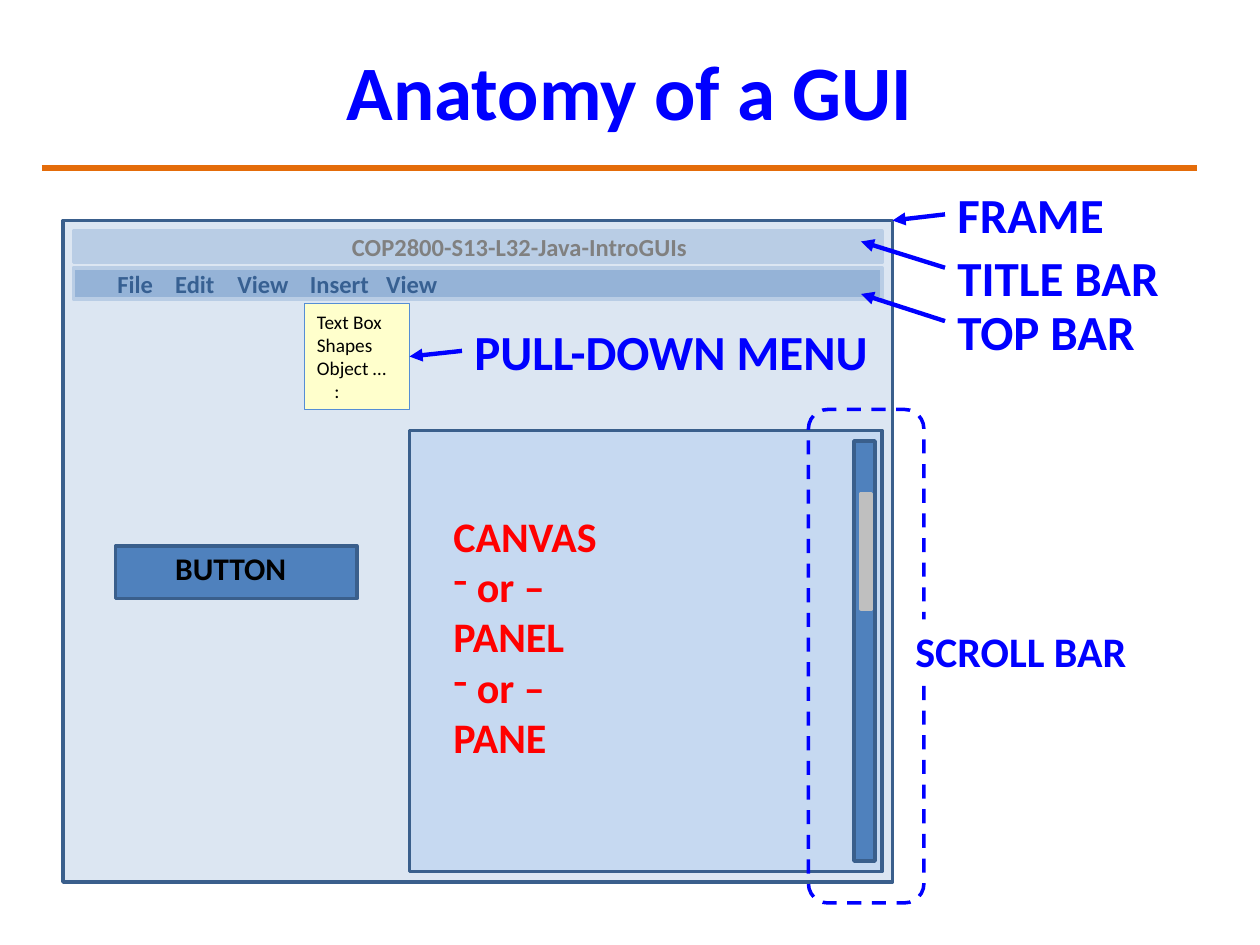
from dataclasses import dataclass
from typing import Optional

from lxml.etree import SubElement
from pptx import Presentation
from pptx.dml.color import RGBColor
from pptx.enum.dml import MSO_LINE_DASH_STYLE as Dash
from pptx.enum.shapes import MSO_CONNECTOR as Connector, MSO_SHAPE as Preset
from pptx.enum.text import MSO_ANCHOR as Anchor, PP_ALIGN as Align
from pptx.oxml.ns import qn
from pptx.util import Pt

FONT = "Calibri"
BLUE = RGBColor(0x00, 0x00, 0xFF)
RED = RGBColor(0xFF, 0x00, 0x00)
BLACK = RGBColor(0x00, 0x00, 0x00)
WHITE = RGBColor(0xFF, 0xFF, 0xFF)
ORANGE = RGBColor(0xE4, 0x6C, 0x0A)
GRAY = RGBColor(0x80, 0x80, 0x80)
SILVER = RGBColor(0xBF, 0xBF, 0xBF)
YELLOW = RGBColor(0xFF, 0xFF, 0xCC)
FRAME_FILL = RGBColor(0xDC, 0xE6, 0xF2)
BAR_FILL = RGBColor(0xB9, 0xCD, 0xE5)
MENU_FILL = RGBColor(0x95, 0xB3, 0xD7)
MENU_TEXT = RGBColor(0x37, 0x60, 0x92)
MENU_EDGE = RGBColor(0x55, 0x8E, 0xD5)
CANVAS_FILL = RGBColor(0xC6, 0xD9, 0xF1)
CONTROL = RGBColor(0x4F, 0x81, 0xBD)
EDGE = RGBColor(0x3A, 0x5F, 0x8C)


@dataclass(frozen=True)
class Area:
    left: float
    top: float
    width: float
    height: float

    def points(self) -> tuple:
        return Pt(self.left), Pt(self.top), Pt(self.width), Pt(self.height)


@dataclass(frozen=True)
class Style:
    size: float
    color: RGBColor
    bold: bool = True


@dataclass(frozen=True)
class Callout:
    text: str
    area: Area
    start: tuple
    end: tuple


LABEL = Style(28, BLUE)


def add_panel(page, area: Area, fill: Optional[RGBColor], edge: Optional[RGBColor] = None,
              weight: float = 2, preset=Preset.RECTANGLE):
    shape = page.shapes.add_shape(preset, *area.points())
    shape.shadow.inherit = False
    if fill is None:
        shape.fill.background()
    else:
        shape.fill.solid()
        shape.fill.fore_color.rgb = fill
    if edge is None:
        shape.line.fill.background()
    else:
        shape.line.color.rgb = edge
        shape.line.width = Pt(weight)
    return shape


def write(shape, lines: list, style: Style, align=Align.LEFT, anchor=Anchor.TOP) -> list:
    frame = shape.text_frame
    frame.word_wrap = True
    frame.vertical_anchor = anchor
    paras = []
    for index, line in enumerate(lines):
        para = frame.add_paragraph() if index else frame.paragraphs[0]
        para.alignment = align
        span = para.add_run()
        span.text = line
        span.font.name = FONT
        span.font.size = Pt(style.size)
        span.font.bold = style.bold
        span.font.color.rgb = style.color
        paras.append(para)
    return paras


def add_text(page, area: Area, lines: list, style: Style, **layout):
    box = page.shapes.add_textbox(*area.points())
    return box, write(box, lines, style, **layout)


def add_line(page, start: tuple, end: tuple, color: RGBColor, weight: float, arrow: bool = False):
    line = page.shapes.add_connector(Connector.STRAIGHT, *map(Pt, start + end))
    line.line.color.rgb = color
    line.line.width = Pt(weight)
    if arrow:
        SubElement(line.line._get_or_add_ln(), qn("a:tailEnd"), type="triangle")
    SubElement(line._element.spPr, qn("a:effectLst"))
    return line


def add_callout(page, callout: Callout):
    box, _ = add_text(page, callout.area, [callout.text], LABEL)
    arrow = add_line(page, callout.start, callout.end, BLUE, 2.5, arrow=True)
    middle = callout.area.top + callout.area.height / 2
    if abs(callout.start[1] - middle) < 1:
        arrow.begin_connect(box, 1)
    return arrow


def set_tabs(para, stops: list) -> None:
    tabs = SubElement(para._p.get_or_add_pPr(), qn("a:tabLst"))
    for stop in stops:
        SubElement(tabs, qn("a:tab"), pos=str(Pt(stop)), algn="l")


def set_dash_bullet(para) -> None:
    props = para._p.get_or_add_pPr()
    props.set("marL", "0")
    props.set("indent", "0")
    SubElement(props, qn("a:buFontTx"))
    SubElement(props, qn("a:buChar"), char="-")


def main() -> None:
    deck = Presentation()
    deck.slide_width, deck.slide_height = Pt(720), Pt(540)
    page = deck.slides.add_slide(deck.slide_layouts[6])

    # Heading
    add_text(page, Area(36, 6, 648, 90), ["Anatomy of a GUI"], Style(44, BLUE),
             align=Align.CENTER, anchor=Anchor.MIDDLE)
    add_line(page, (24, 96), (684, 96), ORANGE, 3)

    # Window frame
    add_panel(page, Area(36, 126, 474, 378), FRAME_FILL, EDGE)

    # Title bar and top bar
    add_panel(page, Area(42, 132, 462, 18), BAR_FILL, BAR_FILL)
    add_text(page, Area(194, 129, 306, 24), ["COP2800-S13-L32-Java-IntroGUIs"], Style(14, GRAY))
    add_panel(page, Area(42, 153, 462, 18), MENU_FILL, BAR_FILL)
    _, menu_paras = add_text(page, Area(60, 150, 306, 24),
                             ["File\tEdit\tView\tInsert\tView"], Style(14, MENU_TEXT))
    set_tabs(menu_paras[0], [33, 68.5, 110, 153.5])

    # Pull-down menu
    menu = add_panel(page, Area(174, 173.5, 60, 60.5), YELLOW, MENU_EDGE, 0.75)
    items = write(menu, ["Text Box", "Shapes", "Object …", ":"], Style(11, BLACK, False))
    items[-1]._p.get_or_add_pPr().set("marL", str(Pt(10)))

    # Names of the parts, with arrows
    for callout in (
        Callout("FRAME", Area(540, 102, 156, 41), (540, 122.5), (510, 126)),
        Callout("TITLE BAR", Area(540, 138, 156, 41), (540, 153), (492, 138)),
        Callout("TOP BAR", Area(540, 168.5, 156, 41), (540, 183.5), (492, 168)),
    ):
        add_callout(page, callout)
    menu_arrow = add_callout(page, Callout("PULL-DOWN MENU", Area(264, 180, 306, 41),
                                           (264, 200.5), (234, 204)))
    menu_arrow.end_connect(menu, 3)

    # Canvas
    add_panel(page, Area(234, 246, 270, 252), CANVAS_FILL, EDGE)
    _, canvas_paras = add_text(page, Area(252, 288, 228, 153),
                               ["CANVAS", " or –", "PANEL", " or –", "PANE"], Style(24, RED))
    for para in canvas_paras[1::2]:
        set_dash_bullet(para)

    # Scroll bar
    add_panel(page, Area(488, 252, 12, 240), CONTROL, EDGE)
    add_panel(page, Area(492, 282, 6, 66), SILVER, SILVER)
    outline = add_panel(page, Area(462, 234, 66, 282), None, BLUE, preset=Preset.ROUNDED_RECTANGLE)
    outline.line.dash_style = Dash.DASH
    scroll_label = add_panel(page, Area(516, 354, 150, 36), WHITE)
    write(scroll_label, ["SCROLL BAR"], Style(24, BLUE))

    # Button
    add_panel(page, Area(66, 312, 138, 30), CONTROL, EDGE)
    add_text(page, Area(93, 310, 96, 29), ["BUTTON"], Style(18, BLACK))

    deck.save("out.pptx")


if __name__ == "__main__":
    main()
